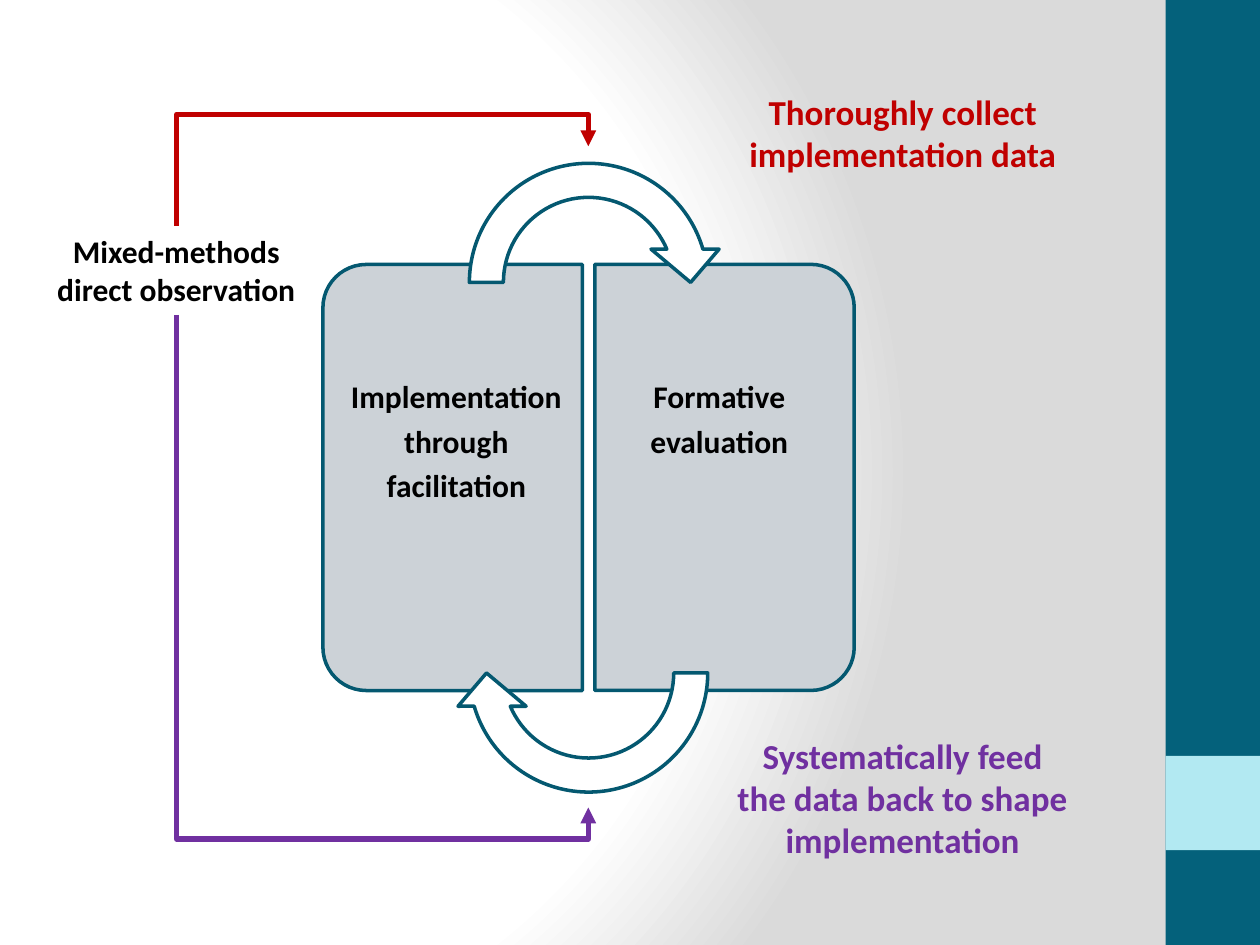
from pptx import Presentation
from pptx.dml.color import RGBColor
from pptx.enum.shapes import MSO_CONNECTOR as CONN, MSO_SHAPE as SHAPE
from pptx.enum.text import MSO_ANCHOR as ANCHOR, PP_ALIGN as ALIGN
from pptx.oxml import parse_xml
from pptx.oxml.ns import nsdecls, qn
from pptx.util import Cm, Pt

TEAL, PALE, EDGE, PANEL = "04617B", "B2E9F2", "045870", "CCD2D7"
WHITE, GREY, BLACK = "FFFFFF", "DADADA", "000000"
RED, PURPLE = "C00000", "7030A0"


def rgb(value):
    return RGBColor.from_string(value)


class Canvas:
    """Holds the style and the slide being drawn; lengths are in cm."""
    font = "Calibri"
    edge_width = 2
    connector_width = 3

    def __init__(self, slide):
        self.s = slide

    def background(self, stops, focus):
        """Circular gradient; focus gives the left, top, right, bottom percentages."""
        self.s.background.fill.gradient()
        old = self.s.element.find(".//" + qn("a:gradFill"))
        gs = "".join(f'<a:gs pos="{pos * 1000}"><a:srgbClr val="{color}"/></a:gs>'
                     for pos, color in stops)
        sides = " ".join(f'{side}="{value * 1000}"' for side, value in zip("ltrb", focus))
        new = parse_xml(f'<a:gradFill {nsdecls("a")} rotWithShape="1"><a:gsLst>{gs}</a:gsLst>'
                        f'<a:path path="circle"><a:fillToRect {sides}/></a:path></a:gradFill>')
        old.getparent().replace(old, new)

    def shape(self, kind, box, fill, line=None, rotation=0, adjustments=()):
        sp = self.s.shapes.add_shape(kind, *map(Cm, box))
        sp.shadow.inherit = False
        sp.rotation = rotation
        for i, value in enumerate(adjustments):
            sp.adjustments[i] = value
        sp.fill.solid()
        sp.fill.fore_color.rgb = rgb(fill)
        if line:
            sp.line.color.rgb = rgb(line)
            sp.line.width = Pt(self.edge_width)
        else:
            sp.line.fill.background()

    def text(self, box, lines, color, size=18, wrap=True, insets=(0.25, 0.13, 0.25, 0.13),
             line_spacing=None, space_after=None):
        tf = self.s.shapes.add_textbox(*map(Cm, box)).text_frame
        tf.word_wrap = wrap
        tf.vertical_anchor = ANCHOR.TOP
        tf.margin_left, tf.margin_top, tf.margin_right, tf.margin_bottom = map(Cm, insets)
        for i, line in enumerate(lines):
            p = tf.add_paragraph() if i else tf.paragraphs[0]
            p.alignment = ALIGN.CENTER
            if line_spacing:
                p.line_spacing = line_spacing
            if space_after:
                p.space_after = Pt(space_after)
            r = p.add_run()
            r.text = line
            r.font.name, r.font.size, r.font.bold = self.font, Pt(size), True
            r.font.color.rgb = rgb(color)

    def elbow(self, start, end, turn_y, color):
        """Arrow that leaves start vertically, runs across at turn_y and comes back to end."""
        (x1, y1), (x2, y2) = start, end
        up = y2 < y1
        # The frame is turned a quarter, so its width is the vertical distance.
        cx, cy = (x1 + x2) / 2, (y1 + y2) / 2
        half_w, half_h = abs(y2 - y1) / 2, (x2 - x1) / 2
        if not up:
            half_h = -half_h
        c = self.s.shapes.add_connector(CONN.ELBOW, Cm(cx + half_w), Cm(cy + half_h),
                                        Cm(cx - half_w), Cm(cy - half_h))
        c.line.color.rgb = rgb(color)
        c.line.width = Pt(self.connector_width)
        pr = c.element.spPr
        pr.find(qn("a:xfrm")).set("rot", str((90 if up else 270) * 60000))
        bend = round((turn_y - y1) / (y2 - y1) * 100000)
        geom = pr.find(qn("a:prstGeom"))
        for old in list(geom):
            geom.remove(old)
        geom.append(parse_xml(f'<a:avLst {nsdecls("a")}>'
                              f'<a:gd name="adj1" fmla="val {bend}"/></a:avLst>'))
        pr.find(qn("a:ln")).append(parse_xml(f'<a:tailEnd {nsdecls("a")} type="triangle"/>'))
        pr.append(parse_xml(f'<a:effectLst {nsdecls("a")}/>'))


def main():
    prs = Presentation()
    prs.slide_width, prs.slide_height = Cm(25.4), Cm(19.05)
    canvas = Canvas(prs.slides.add_slide(prs.slide_layouts[6]))

    canvas.background([(0, WHITE), (75, WHITE), (100, GREY)], (20, 50, 100, 50))
    canvas.shape(SHAPE.RECTANGLE, (23.5, 0, 1.9, 19.05), TEAL)
    canvas.shape(SHAPE.RECTANGLE, (23.5, 15.24, 1.9, 1.9), PALE)

    panels = [
        (4.83, 270, 6.76, (0.18, 0.3, 0.28, 0.3), ["Implementation", "through", "facilitation"]),
        (10.31, 90, 11.96, (0.28, 0.3, 0.18, 0.3), ["Formative", "evaluation"]),
    ]
    for left, rotation, text_left, insets, lines in panels:
        canvas.shape(SHAPE.ROUND_2_SAME_RECTANGLE, (left, 7.01, 8.59, 5.23), PANEL, EDGE,
                     rotation, (0.167, 0))
        canvas.text((text_left, 7.39, 4.98, 6.25), lines, BLACK, insets=insets,
                    line_spacing=0.9, space_after=6)

    for top, rotation in ((2.95, 0), (10.82, 180)):
        canvas.shape(SHAPE.CIRCULAR_ARROW, (9.12, top, 5.49, 5.49), WHITE, EDGE, rotation,
                     (0.125, 11.42, 204.58, 108, 0.125))

    canvas.text((0.89, 4.55, 5.33, 1.8), ["Mixed-methods", "direct observation"], BLACK,
                wrap=False)
    canvas.elbow((3.56, 4.55), (11.86, 2.95), 2.31, RED)
    canvas.elbow((3.56, 6.35), (11.86, 16.28), 16.92, PURPLE)

    canvas.text((14.81, 1.7, 6.78, 1.96), ["Thoroughly collect implementation data"], RED, 20)
    canvas.text((14.6, 14.68, 7.19, 2.82),
                ["Systematically feed the data back to shape implementation"], PURPLE, 20)

    prs.save("out.pptx")


if __name__ == "__main__":
    main()
